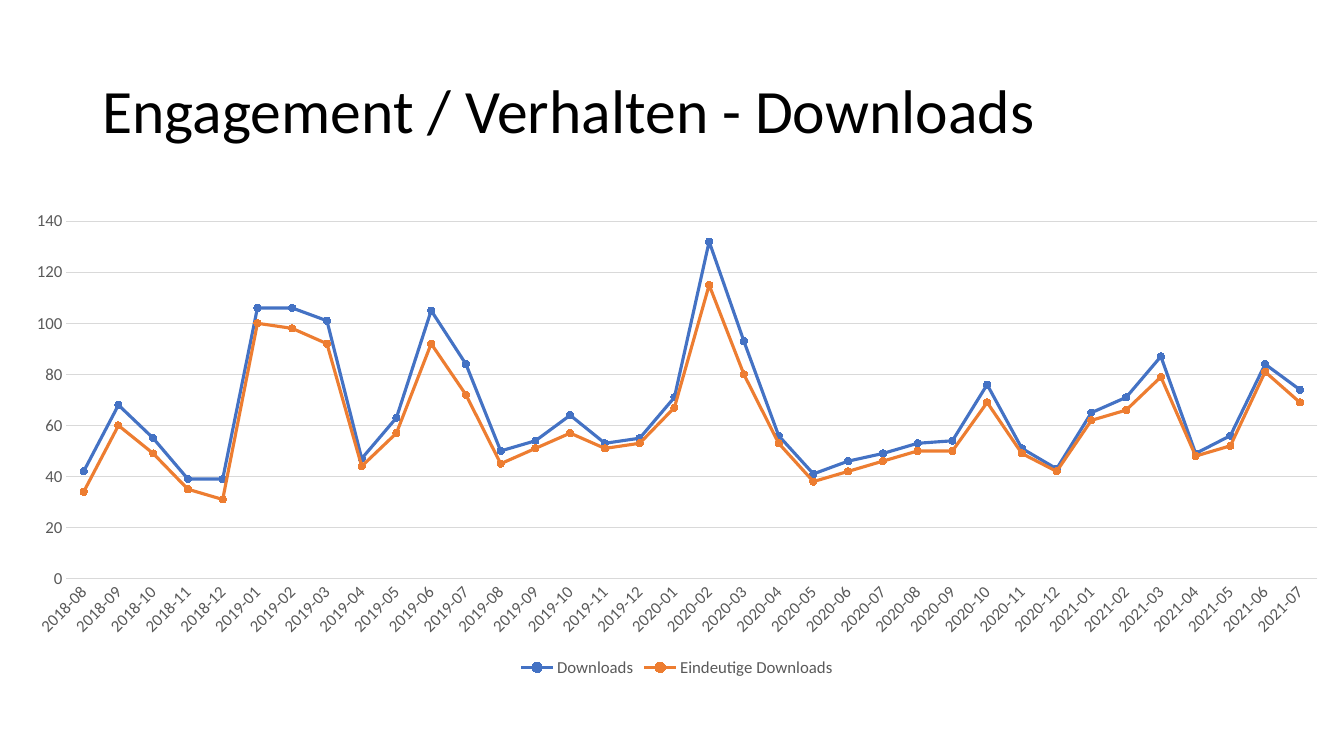
from pptx import Presentation
from pptx.chart.data import CategoryChartData
from pptx.dml.color import RGBColor
from pptx.enum.chart import XL_CHART_TYPE, XL_LEGEND_POSITION, XL_MARKER_STYLE, XL_TICK_MARK
from pptx.enum.text import MSO_ANCHOR, MSO_AUTO_SIZE, PP_ALIGN
from pptx.oxml.ns import qn
from pptx.util import Inches, Pt

LINES = XL_CHART_TYPE.LINE_MARKERS
BOTTOM = XL_LEGEND_POSITION.BOTTOM
CIRCLE = XL_MARKER_STYLE.CIRCLE
NO_TICK = XL_TICK_MARK.NONE
MIDDLE = MSO_ANCHOR.MIDDLE
NO_FIT = MSO_AUTO_SIZE.NONE
LEFT = PP_ALIGN.LEFT

WIDTH, HEIGHT = Inches(13.33), Inches(7.5)
CELL = Inches(0.1)
FONT, GREY, RULE = "Calibri", "595959", "D9D9D9"
AUTO_TURN = "-60000000"
START, COUNT = 2018 * 12 + 7, 36
MONTHS = [f"{m // 12}-{m % 12 + 1:02}" for m in range(START, START + COUNT)]
SERIES = [
    ("Downloads", "4472C4",
     [42, 68, 55, 39, 39, 106, 106, 101, 47, 63, 105, 84,
      50, 54, 64, 53, 55, 71, 132, 93, 56, 41, 46, 49,
      53, 54, 76, 51, 43, 65, 71, 87, 49, 56, 84, 74]),
    ("Eindeutige Downloads", "ED7D31",
     [34, 60, 49, 35, 31, 100, 98, 92, 44, 57, 92, 72,
      45, 51, 57, 51, 53, 67, 115, 80, 53, 38, 42, 46,
      50, 50, 69, 49, 42, 62, 66, 79, 48, 52, 81, 69]),
]


def color(code):
    return RGBColor.from_string(code)


def area(col, row, cols, rows):
    """Turn columns and rows of the grid into lengths."""
    return [round(cells * CELL) for cells in (col, row, cols, rows)]


def set_font(font, size, code):
    font.name, font.size = FONT, Pt(size)
    font.color.rgb = color(code)


def set_line(line, width, code):
    line.width = Pt(width)
    line.color.rgb = color(code)


def set_fill(fill, code):
    fill.solid()
    fill.fore_color.rgb = color(code)


def put_text(shape, text, size=12, code="000000", spacing=1.0, align=LEFT):
    frame = shape.text_frame
    frame.word_wrap, frame.auto_size = True, NO_FIT
    frame.vertical_anchor = MIDDLE
    para = frame.paragraphs[0]
    para.line_spacing, para.alignment = spacing, align
    run = para.add_run()
    run.text = text
    set_font(run.font, size, code)


def add_title(slide, text, box):
    title = slide.shapes.title
    title.left, title.top, title.width, title.height = box
    put_text(title, text, size=44, spacing=0.9)


def style_axis(axis):
    axis.major_tick_mark = axis.minor_tick_mark = NO_TICK
    set_font(axis.tick_labels.font, 12, GREY)
    body = axis._element.find(qn("c:txPr")).find(qn("a:bodyPr"))
    body.set("rot", AUTO_TURN)
    body.set("vert", "horz")


def style_series(series, code):
    series.smooth = False
    set_line(series.format.line, 2.25, code)
    marker = series.marker
    marker.style, marker.size = CIRCLE, 5
    set_fill(marker.format.fill, code)
    set_line(marker.format.line, 0.75, code)


def add_lines(slide, box):
    data = CategoryChartData()
    data.categories = MONTHS
    for name, _, values in SERIES:
        data.add_series(name, values)
    chart = slide.shapes.add_chart(LINES, *box, data).chart
    set_font(chart.font, 10, "000000")
    chart.has_title = False
    chart.has_legend = True
    chart.legend.position = BOTTOM
    chart.legend.include_in_layout = False
    set_font(chart.legend.font, 12, GREY)

    months, counts = chart.category_axis, chart.value_axis
    for axis in (months, counts):
        style_axis(axis)
    set_line(months.format.line, 0.75, RULE)
    counts.format.line.fill.background()
    counts.has_major_gridlines = True
    set_line(counts.major_gridlines.format.line, 0.75, RULE)

    plot = chart.plots[0]
    plot.vary_by_categories = False
    for series, (_, code, _) in zip(plot.series, SERIES):
        style_series(series, code)


def main():
    deck = Presentation()
    deck.slide_width, deck.slide_height = WIDTH, HEIGHT
    slide = deck.slides.add_slide(deck.slide_layouts.get_by_name("Title Only"))
    set_fill(slide.background.fill, "FFFFFF")
    add_title(slide, "Engagement / Verhalten - Downloads",
              area(9.17, 4, 115, 14.5))
    add_lines(slide, area(1, 20, 132.3, 47.6))
    deck.save("out.pptx")


if __name__ == "__main__":
    main()
